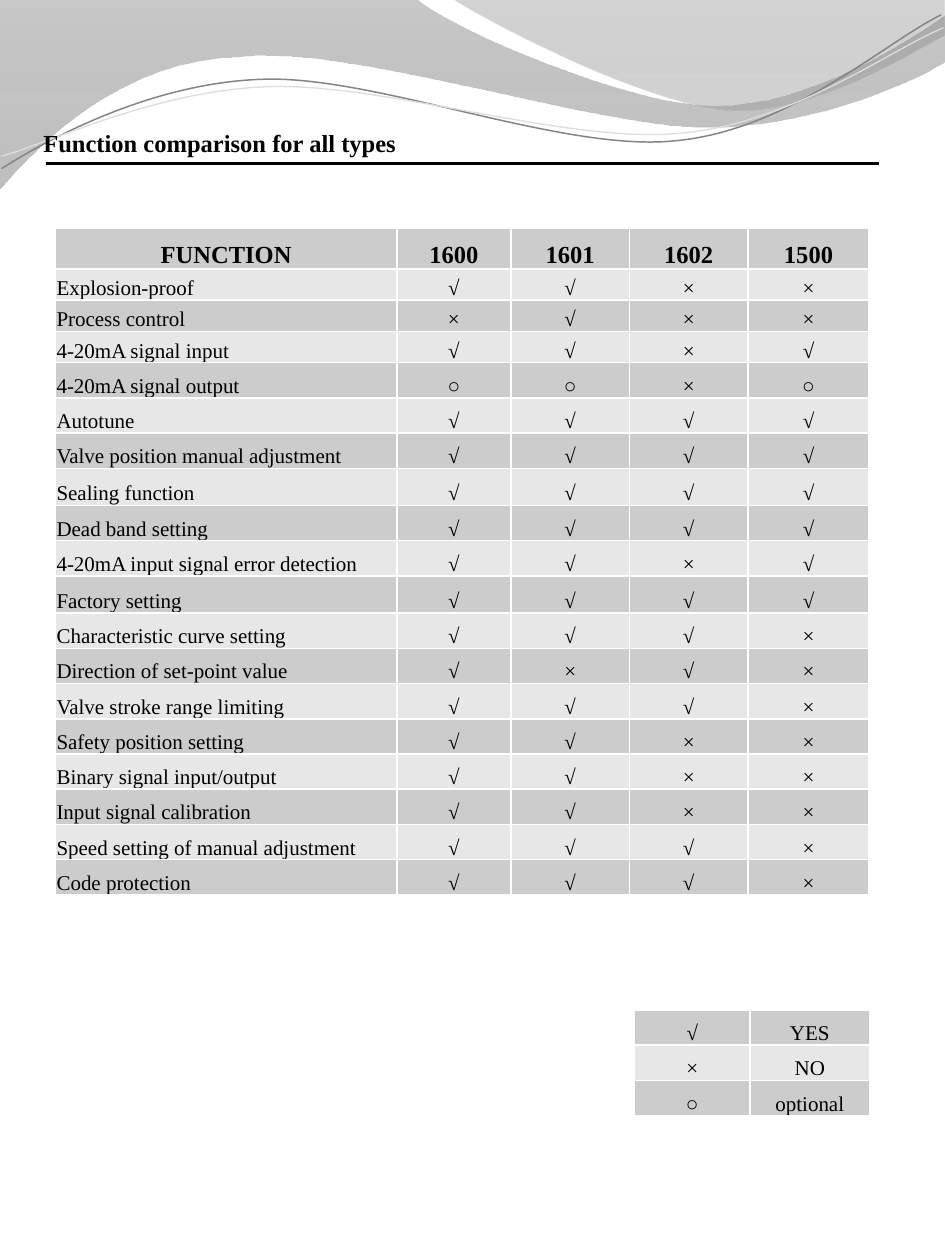
import math

from lxml import etree
from pptx import Presentation
from pptx import util as u
from pptx.dml.color import RGBColor
from pptx.enum import shapes, text
from pptx.oxml import parse_xml
from pptx.oxml.ns import nsdecls, qn

TITLE = "Function comparison for all types"
HEADER = ("FUNCTION", "1600", "1601", "1602", "1500")
FUNCTIONS = [
    ("Explosion-proof", "√√××"),
    ("Process control", "×√××"),
    ("4-20mA signal input", "√√×√"),
    ("4-20mA signal output", "○○×○"),
    ("Autotune", "√√√√"),
    ("Valve position manual adjustment", "√√√√"),
    ("Sealing function", "√√√√"),
    ("Dead band setting", "√√√√"),
    ("4-20mA input signal error detection", "√√×√"),
    ("Factory setting", "√√√√"),
    ("Characteristic curve setting", "√√√×"),
    ("Direction of set-point value", "√×√×"),
    ("Valve stroke range limiting", "√√√×"),
    ("Safety position setting", "√√××"),
    ("Binary signal input/output", "√√××"),
    ("Input signal calibration", "√√××"),
    ("Speed setting of manual adjustment", "√√√×"),
    ("Code protection", "√√√×"),
]
LEGEND = [("√", "YES"), ("×", "NO"), ("○", "optional")]

FONT = "Times New Roman"
COLORS = {
    "text": "000000", "border": "FFFFFF", "dark row": "CCCCCC", "light row": "E7E7E7",
    "dark curve": "848484", "light curve": "DDDDDD",
}
ROW, TALL_ROW, SHORT_ROW, HEADER_ROW = 0.71, 0.75, 0.63, 0.8
ROW_HEIGHTS = [HEADER_ROW] + [SHORT_ROW] * 3 + [ROW] * 15
ROW_HEIGHTS[7] = ROW_HEIGHTS[10] = TALL_ROW
TILT = 2.7

WAVES = [
    {"start": (0, -0.03),
     "steps": [(8.38, -0.03),
               (9.07, 0.56, 12.65, 2.13, 14.45, 2.13), (16.26, 2.13, 18.26, 0.86, 19.05, 0.3),
               (19.08, 1.22),
               (18.75, 1.47, 16.56, 2.57, 14.2, 2.57), (11.84, 2.54, 7.26, 0.94, 4.9, 1.14),
               (2.46, 1.19, 0.86, 2.82, -0.03, 3.84), (0, -0.03)],
     "stops": [(0, "848484", 45), (100, "888888", 55)]},
    {"start": (9.12, -0.03),
     "steps": [(9.7, 0.38, 12.98, 2.08, 14.66, 2.21), (16.31, 2.34, 18.31, 1.09, 19.05, 0.71),
               (19.05, 0), (9.12, -0.03)],
     "stops": [(0, "6F6F6F", 30), (80, "9D9D9D", 45)]},
    {"start": (0.03, 3.4),
     "steps": [(0.91, 2.84, 3, 1.68, 5.26, 1.6), (7.52, 1.5, 11.3, 3.07, 13.59, 2.84),
               (15.9, 2.64, 17.86, 0.84, 18.97, 0.3)],
     "line": ("dark curve", 0.85), "center": (9.5, 1.97)},
    {"start": (0.03, 3.15),
     "steps": [(0.91, 2.92, 3.1, 1.83, 5.38, 1.75), (7.67, 1.65, 11.4, 2.9, 13.67, 2.69),
               (15.95, 2.51, 17.91, 1.02, 19.02, 0.56)],
     "line": ("light curve", 0.75), "center": (9.54, 1.99)},
]


def color(name):
    return RGBColor.from_string(COLORS[name])


def turn(point, center):
    x, y = point[0] - center[0], point[1] - center[1]
    cos, sin = math.cos(math.radians(TILT)), math.sin(math.radians(TILT))
    return center[0] + x * cos - y * sin, center[1] + x * sin + y * cos


def bend(shape, steps):
    outline = next(shape.element.iter(qn("a:path")))
    segments = iter(outline.findall(qn("a:lnTo")))
    for step in steps:
        segment = next(segments)
        if len(step) == 6:
            curve = etree.Element(qn("a:cubicBezTo"))
            segment.addprevious(curve)
            for corner in (segment, next(segments), next(segments)):
                curve.append(corner[0])
                outline.remove(corner)


def add_wave(page, wave):
    steps = wave["steps"]
    points = [wave["start"]] + [step[i:i + 2] for step in steps for i in range(0, len(step), 2)]
    if "center" in wave:
        points = [turn(point, wave["center"]) for point in points]
    points = [(u.Cm(x), u.Cm(y)) for x, y in points]
    builder = page.shapes.build_freeform(*points[0])
    builder.add_line_segments(points[1:], close="stops" in wave)
    shape = builder.convert_to_shape()
    bend(shape, steps)
    shape.shadow.inherit = False
    if "line" in wave:
        name, width = wave["line"]
        shape.rotation = 360 - TILT
        shape.fill.background()
        shape.line.color.rgb = color(name)
        shape.line.width = u.Pt(width)
        return
    shape.line.fill.background()
    stops = "".join(
        f'<a:gs pos="{place * 1000}"><a:srgbClr val="{tone}"><a:alpha val="{alpha * 1000}"/></a:srgbClr></a:gs>'
        for place, tone, alpha in wave["stops"]
    )
    gradient = parse_xml(
        f'<a:gradFill {nsdecls("a")} rotWithShape="1"><a:gsLst>{stops}</a:gsLst>'
        '<a:lin ang="5400000" scaled="0"/></a:gradFill>'
    )
    shape.element.spPr.find(qn("a:custGeom")).addnext(gradient)


def write(para, words, size, bold, align):
    para.alignment = align
    span = para.add_run()
    span.text = words
    for key, value in {"name": FONT, "size": u.Pt(size), "bold": bold}.items():
        setattr(span.font, key, value)
    span.font.color.rgb = color("text")


def add_grid(page, rows, left, top, widths, heights, header=False):
    frame = page.shapes.add_table(
        len(rows), len(widths), u.Cm(left), u.Cm(top), u.Cm(sum(widths)), u.Cm(sum(heights))
    )
    table = frame.table
    table.first_row, table.horz_banding = header, False
    for column, width in zip(table.columns, widths):
        column.width = u.Cm(width)
    for r, (row, height) in enumerate(zip(rows, heights)):
        table.rows[r].height = u.Cm(height)
        is_header = header and r == 0
        side = u.Cm(0.18 if is_header else 0.02)
        layout = {
            "margin_left": side, "margin_right": side,
            "margin_top": 0 if is_header else side, "margin_bottom": 0,
            "vertical_anchor": text.MSO_ANCHOR.MIDDLE if is_header else text.MSO_ANCHOR.BOTTOM,
        }
        for c, words in enumerate(row):
            cell = table.cell(r, c)
            for key, value in layout.items():
                setattr(cell, key, value)
            cell.fill.solid()
            cell.fill.fore_color.rgb = color("light row" if r % 2 else "dark row")
            add_borders(cell)
            is_label = header and r > 0 and c == 0
            para = cell.text_frame.paragraphs[0]
            if is_header:
                para.line_spacing = 1.5
            align = text.PP_ALIGN.LEFT if is_label else text.PP_ALIGN.CENTER
            write(para, words, 14 if is_header else 12, is_header, align)


def add_borders(cell):
    properties = cell._tc.get_or_add_tcPr()
    for i, edge in enumerate(("lnL", "lnR", "lnT", "lnB")):
        properties.insert(i, parse_xml(
            f'<a:{edge} {nsdecls("a")} w="12700"><a:solidFill>'
            f'<a:srgbClr val="{COLORS["border"]}"/></a:solidFill></a:{edge}>'
        ))


def add_title(page):
    box = page.shapes.title
    place = {"left": 0.62, "top": 2.45, "width": 9.78, "height": 0.86}
    for key, value in place.items():
        setattr(box, key, u.Cm(value))
    frame = box.text_frame
    frame.auto_size = text.MSO_AUTO_SIZE.SHAPE_TO_FIT_TEXT
    frame.vertical_anchor = text.MSO_ANCHOR.TOP
    write(frame.paragraphs[0], TITLE, 14, True, text.PP_ALIGN.LEFT)
    box.element.getparent().append(box.element)


def add_rule(page):
    rule = page.shapes.add_connector(
        shapes.MSO_CONNECTOR.STRAIGHT, u.Cm(0.92), u.Cm(3.3), u.Cm(17.72), u.Cm(3.3)
    )
    rule.line.color.rgb = color("text")
    rule.line.width = u.Pt(1.5)
    etree.SubElement(rule.element.spPr, qn("a:effectLst"))


def main():
    deck = Presentation()
    deck.slide_width, deck.slide_height = u.Cm(19.05), u.Cm(25.4)
    page = deck.slides.add_slide(deck.slide_layouts[5])
    for wave in WAVES:
        add_wave(page, wave)
    rows = [HEADER] + [(name, *marks) for name, marks in FUNCTIONS]
    add_grid(page, rows, 1.12, 4.6, (6.88, 2.3, 2.39, 2.39, 2.44), ROW_HEIGHTS, header=True)
    add_title(page)
    add_rule(page)
    add_grid(page, LEGEND, 12.79, 20.36, (2.33, 2.41), [ROW] * len(LEGEND))
    deck.save("out.pptx")


if __name__ == "__main__":
    main()
